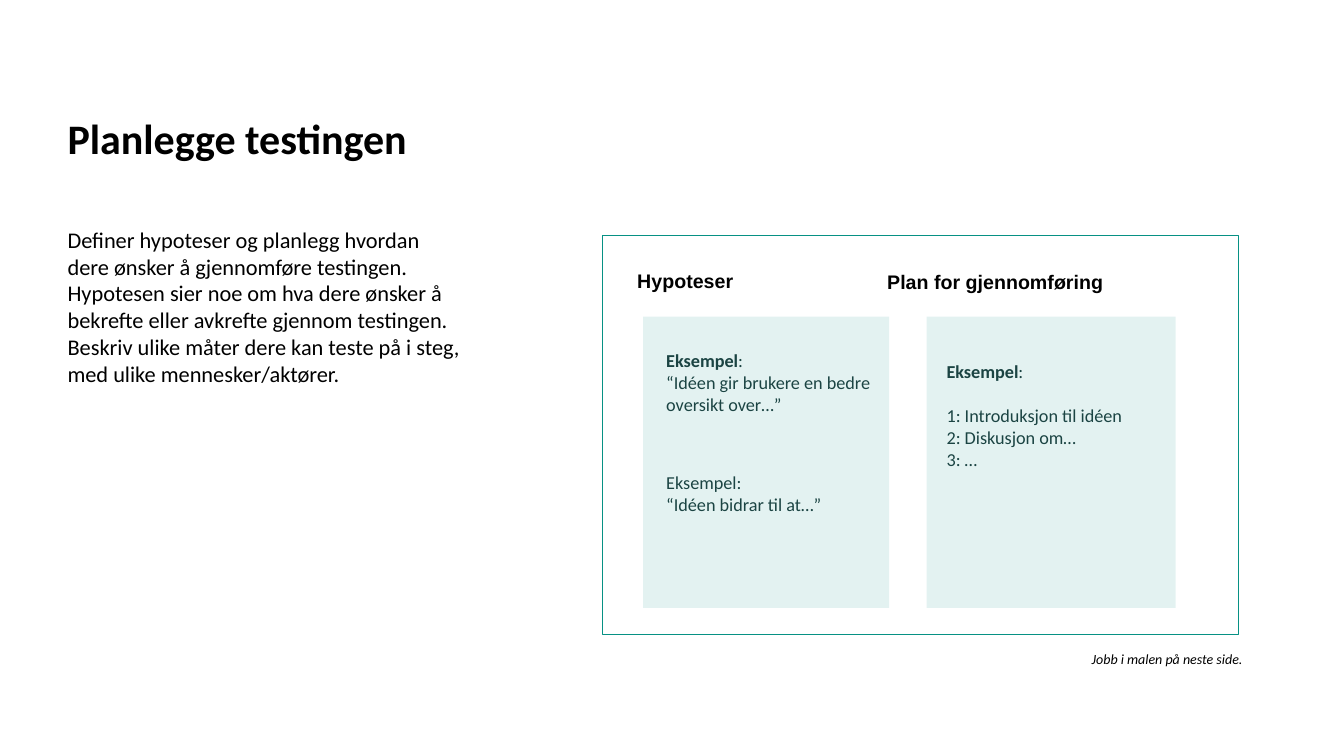
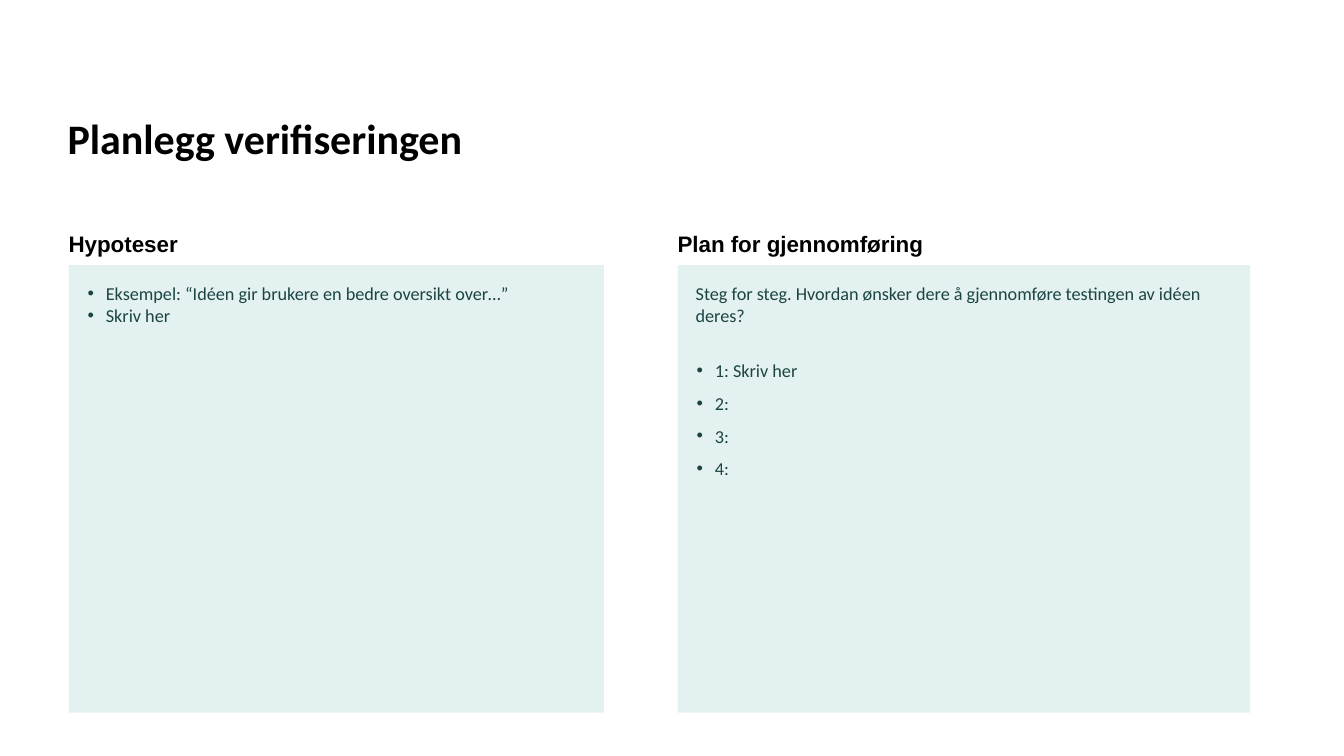
from dataclasses import dataclass

from lxml.etree import SubElement
from pptx import Presentation
from pptx.dml.color import RGBColor
from pptx.enum.shapes import MSO_SHAPE
from pptx.enum.text import MSO_ANCHOR, MSO_AUTO_SIZE, PP_ALIGN
from pptx.oxml.ns import qn
from pptx.util import Inches, Pt

BLACK = "000000"
GREEN = "079184"
DARK_GREEN = "1B4443"
BODY_FONT = "Calibri"
HEADING_FONT = "Arial"
PANEL_OPACITY = 11


@dataclass
class Line:
    text: str
    lead: str = ""
    bullet: bool = False
    spacing: float = 1.0
    before: float = 0


def color(value):
    return RGBColor.from_string(value)


def box(left, top, width, height):
    return [Inches(value) for value in (left, top, width, height)]


class Deck:
    TITLE_AND_BODY = 1
    TITLE_ONLY = 5

    def __init__(self):
        self.presentation = Presentation()
        self.presentation.slide_width = Inches(13.33)
        self.presentation.slide_height = Inches(7.5)
        self.slide = None

    def add_slide(self, layout, title):
        self.slide = self.presentation.slides.add_slide(
            self.presentation.slide_layouts[layout])
        self.place(self.slide.shapes.title, 0.57, 0.34, 12.19, 1.33)
        self.fill_text(self.slide.shapes.title, [Line(title, spacing=0.9)], 30,
                       margins=(0.1, 0.05), anchor=MSO_ANCHOR.BOTTOM, bold=True)

    def place(self, shape, *bounds):
        shape.left, shape.top, shape.width, shape.height = box(*bounds)

    def add_bullet(self, paragraph):
        properties = paragraph._p.get_or_add_pPr()
        properties.set("marL", str(Inches(0.19)))
        properties.set("indent", str(Inches(-0.18)))
        bullet_color = SubElement(properties, qn("a:buClr"))
        SubElement(bullet_color, qn("a:srgbClr"), val=DARK_GREEN)
        SubElement(properties, qn("a:buFont"), typeface="Arial")
        SubElement(properties, qn("a:buChar"), char="•")

    def remove_bullet(self, paragraph):
        properties = paragraph._p.get_or_add_pPr()
        properties.set("marL", "0")
        properties.set("indent", "0")
        SubElement(properties, qn("a:buNone"))

    def fill_text(self, shape, lines, size, margins, font=BODY_FONT, ink=BLACK,
                  anchor=MSO_ANCHOR.TOP, bold=None, italic=None):
        frame = shape.text_frame
        frame.word_wrap = True
        frame.auto_size = MSO_AUTO_SIZE.NONE
        frame.vertical_anchor = anchor
        frame.margin_left = frame.margin_right = Inches(margins[0])
        frame.margin_top = frame.margin_bottom = Inches(margins[1])
        for index, line in enumerate(lines):
            paragraph = frame.add_paragraph() if index else frame.paragraphs[0]
            if line.bullet:
                self.add_bullet(paragraph)
            else:
                self.remove_bullet(paragraph)
            paragraph.alignment = PP_ALIGN.LEFT
            paragraph.line_spacing = line.spacing
            paragraph.space_before = Pt(line.before)
            paragraph.font.name = font
            paragraph.font.size = Pt(size)
            paragraph.font.color.rgb = color(ink)
            paragraph.font.bold = bold
            paragraph.font.italic = italic
            if line.lead:
                lead = paragraph.add_run()
                lead.text = line.lead
                lead.font.bold = True
            paragraph.add_run().text = line.text

    def body(self, text, *bounds):
        placeholder = self.slide.placeholders[1]
        self.place(placeholder, *bounds)
        self.fill_text(placeholder, [Line(text)], 16, margins=(0.1, 0.05))

    def heading(self, text, size, *bounds):
        shape = self.slide.shapes.add_textbox(*box(*bounds))
        self.fill_text(shape, [Line(text, spacing=1.25)], size, margins=(0, 0),
                       font=HEADING_FONT, bold=True)

    def note(self, lines, *bounds, size=13, ink=DARK_GREEN, italic=None):
        shape = self.slide.shapes.add_textbox(*box(*bounds))
        self.fill_text(shape, lines, size, margins=(0.1, 0.1), ink=ink,
                       italic=italic)

    def rectangle(self, *bounds):
        shape = self.slide.shapes.add_shape(MSO_SHAPE.RECTANGLE, *box(*bounds))
        shape.shadow.inherit = False
        return shape

    def panel(self, *bounds, lines=()):
        shape = self.rectangle(*bounds)
        shape.fill.solid()
        shape.fill.fore_color.rgb = color(GREEN)
        fill_color = shape.element.spPr.find(".//" + qn("a:srgbClr"))
        SubElement(fill_color, qn("a:alpha"), val=str(PANEL_OPACITY * 1000))
        shape.line.fill.background()
        self.fill_text(shape, lines, 13, margins=(0.18, 0.17), ink=DARK_GREEN)

    def frame(self, *bounds):
        shape = self.rectangle(*bounds)
        shape.fill.background()
        shape.line.color.rgb = color(GREEN)
        shape.line.width = Pt(0.75)


def add_planning_slide(deck):
    deck.add_slide(Deck.TITLE_AND_BODY, "Planlegge testingen")
    deck.body("Definer hypoteser og planlegg hvordan dere ønsker å gjennomføre "
              "testingen. Hypotesen sier noe om hva dere ønsker å bekrefte eller "
              "avkrefte gjennom testingen. Beskriv ulike måter dere kan teste på "
              "i steg, med ulike mennesker/aktører.", 0.57, 2.19, 4.15, 4.97)
    deck.panel(6.38, 3.14, 2.44, 2.89)
    deck.panel(9.19, 3.14, 2.47, 2.89)
    deck.frame(5.98, 2.34, 6.3, 3.96)
    deck.heading("Hypoteser", 14, 6.32, 2.61, 1.52, 0.3)
    deck.heading("Plan for gjennomføring", 14, 8.8, 2.62, 2.26, 0.3)
    deck.note([Line(":", lead="Eksempel"),
               Line("“Idéen gir brukere en bedre oversikt over…”")],
              6.51, 3.37, 2.26, 0.86)
    deck.note([Line("Eksempel:"), Line("“Idéen bidrar til at…”")],
              6.51, 4.58, 2.26, 0.88)
    deck.note([Line(":", lead="Eksempel"),
               Line("1: Introduksjon til idéen", before=16),
               Line("2: Diskusjon om…"), Line("3: …")],
              9.29, 3.47, 2.26, 1.3)
    deck.note([Line("Jobb i malen på neste side.")], 10.73, 6.35, 1.8, 0.37,
              size=10, ink=BLACK, italic=True)


def add_template_slide(deck):
    deck.add_slide(Deck.TITLE_ONLY, "Planlegg verifiseringen")
    hypotheses = [
        Line("Eksempel: “Idéen gir brukere en bedre oversikt over…”", bullet=True),
        Line("Skriv her", bullet=True),
    ]
    steps = [Line("Steg for steg. Hvordan ønsker dere å gjennomføre testingen "
                  "av idéen deres?")]
    steps += [Line(text, bullet=True, spacing=1.5, before=0 if index else 16)
              for index, text in enumerate(("1: Skriv her", "2:", "3:", "4:"))]
    for text, left, width, lines in (
            ("Hypoteser", 0.68, 5.31, hypotheses),
            ("Plan for gjennomføring", 6.72, 5.68, steps)):
        deck.heading(text, 16, left, 2.22, 3.86, 0.29)
        deck.panel(left, 2.63, width, 4.44, lines=lines)


def main():
    deck = Deck()
    add_planning_slide(deck)
    add_template_slide(deck)
    deck.presentation.save("out.pptx")


if __name__ == "__main__":
    main()
